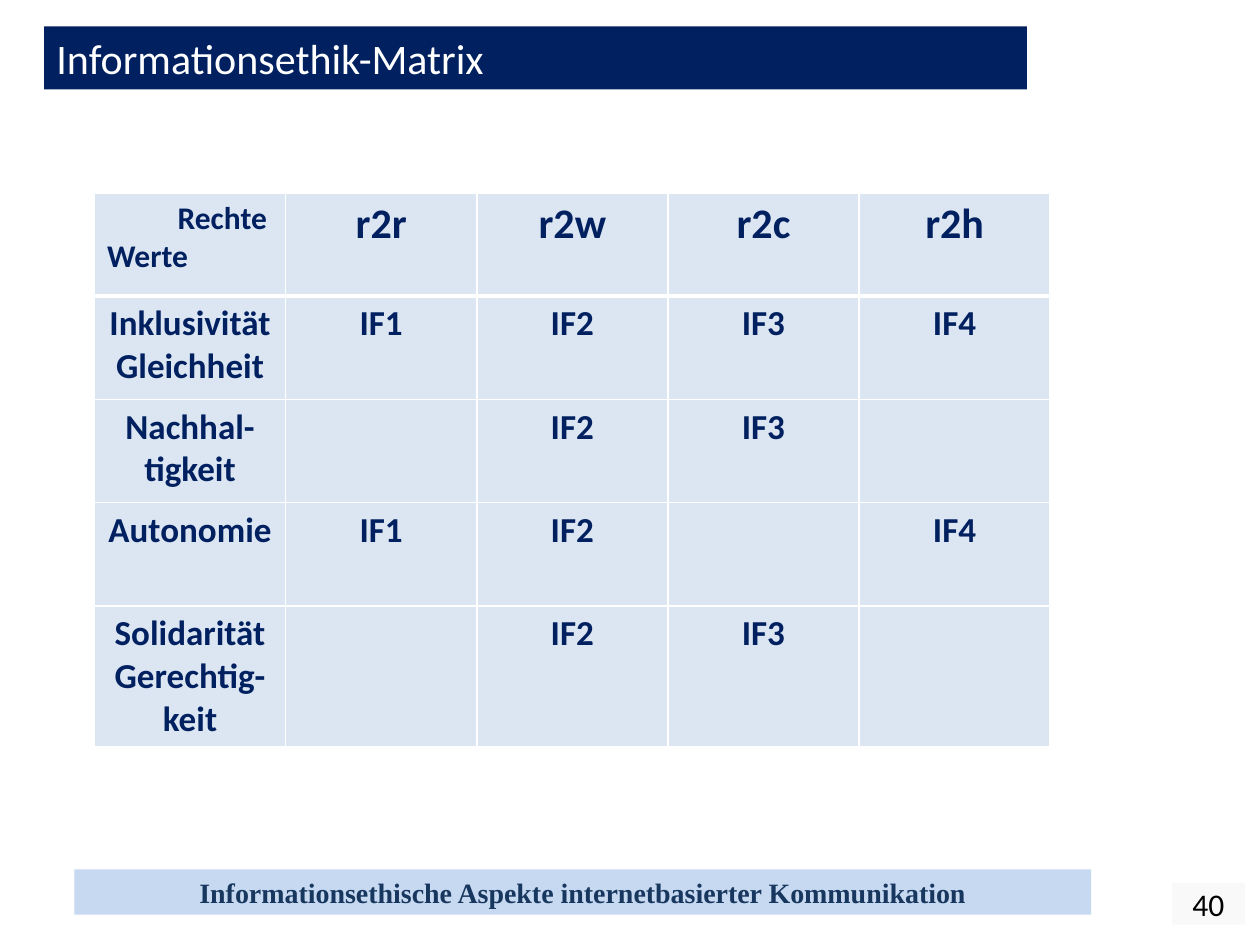
"""Build the slide with the information ethics matrix of rights and values."""
from dataclasses import dataclass

from lxml import etree
from pptx import Presentation
from pptx.dml.color import RGBColor
from pptx.enum import shapes, text
from pptx.oxml import ns
from pptx.util import Inches, Pt


@dataclass(frozen=True)
class Theme:
    navy: str = "002060"
    white: str = "FFFFFF"
    black: str = "000000"
    cell: str = "DCE6F2"
    band: str = "C6D9F1"
    band_ink: str = "17375E"
    number_back: str = "F9F9F9"
    sans: str = "Calibri"
    serif: str = "Times New Roman"
    heading: int = 24
    entry: int = 20
    label: int = 18
    footer: int = 16


def style(frame, size, ink, face, bold=False, align=text.PP_ALIGN.CENTER):
    for line in frame.paragraphs:
        line.alignment = align
        line.font.size, line.font.name, line.font.bold = Pt(size), face, bold
        line.font.color.rgb = RGBColor.from_string(ink)


def bar(slide, box, fill, words, inset, anchor, wrap=True):
    panel = slide.shapes.add_shape(shapes.MSO_SHAPE.RECTANGLE, *map(Inches, box))
    panel.shadow.inherit = False
    panel.fill.solid()
    panel.fill.fore_color.rgb = RGBColor.from_string(fill)
    panel.line.fill.background()
    frame = panel.text_frame
    frame.text, frame.word_wrap, frame.vertical_anchor = words, wrap, anchor
    frame.margin_left = frame.margin_right = Inches(inset)
    frame.margin_top = frame.margin_bottom = Inches(inset / 2)
    return frame


theme = Theme()
WIDTH, HEIGHT = 10, 7.5
COLUMN, ROW = 1.517, 0.82
deck = Presentation()
deck.slide_width, deck.slide_height = Inches(WIDTH), Inches(HEIGHT)
slide = deck.slides.add_slide(deck.slide_layouts[6])
middle = text.MSO_ANCHOR.MIDDLE

number = bar(slide, (0.93 * WIDTH, 7.01, 0.58, 0.33), theme.number_back, "40", 0.1, middle, False)
style(number, theme.label, theme.black, theme.sans)

footer = bar(slide, (0.059 * WIDTH, 0.92 * HEIGHT, 8.07, 0.36), theme.band,
             "Informationsethische Aspekte internetbasierter Kommunikation", 0, middle)
style(footer, theme.footer, theme.band_ink, theme.serif, True)

title = bar(slide, (0.035 * WIDTH, 0.21, 0.78 * WIDTH, 0.5), theme.navy,
            "Informationsethik-Matrix", 0.1, text.MSO_ANCHOR.TOP)
style(title, theme.heading, theme.white, theme.sans, align=text.PP_ALIGN.LEFT)

matrix_rows = [
    ["Rechte Werte", "r2r", "r2w", "r2c", "r2h"],
    ["Inklusivität\nGleichheit", "IF1", "IF2", "IF3", "IF4"],
    ["Nachhal-tigkeit", "", "IF2", "IF3", ""],
    ["Autonomie", "IF1", "IF2", "", "IF4"],
    ["Solidarität Gerechtig-keit", "", "IF2", "IF3", ""],
]
count = len(matrix_rows)
matrix = slide.shapes.add_table(
    count, count, Inches(0.075 * WIDTH), Inches(1.53),
    Inches(count * COLUMN), Inches(count * ROW)).table
matrix.first_row = matrix.horz_banding = False

for r, words in enumerate(matrix_rows):
    for c, word in enumerate(words):
        cell = matrix.cell(r, c)
        cell.text = word
        style(cell.text_frame, theme.entry if r else theme.heading, theme.navy, theme.sans, True)
        edges = {"lnL": 1, "lnR": 1, "lnT": 3 if r == 1 else 1, "lnB": 1 if r else 3}
        for edge, points in edges.items():
            border = etree.SubElement(cell._tc.get_or_add_tcPr(), ns.qn(f"a:{edge}"), w=str(Pt(points)))
            paint = etree.SubElement(border, ns.qn("a:solidFill"))
            etree.SubElement(paint, ns.qn("a:srgbClr"), val=theme.white)
        cell.fill.solid()
        cell.fill.fore_color.rgb = RGBColor.from_string(theme.cell)

corner = matrix.cell(0, 0).text_frame
style(corner, theme.label, theme.navy, theme.sans, True, text.PP_ALIGN.LEFT)
corner.paragraphs[0]._p.get_or_add_pPr().set("indent", str(Inches(0.56)))

deck.save("out.pptx")
